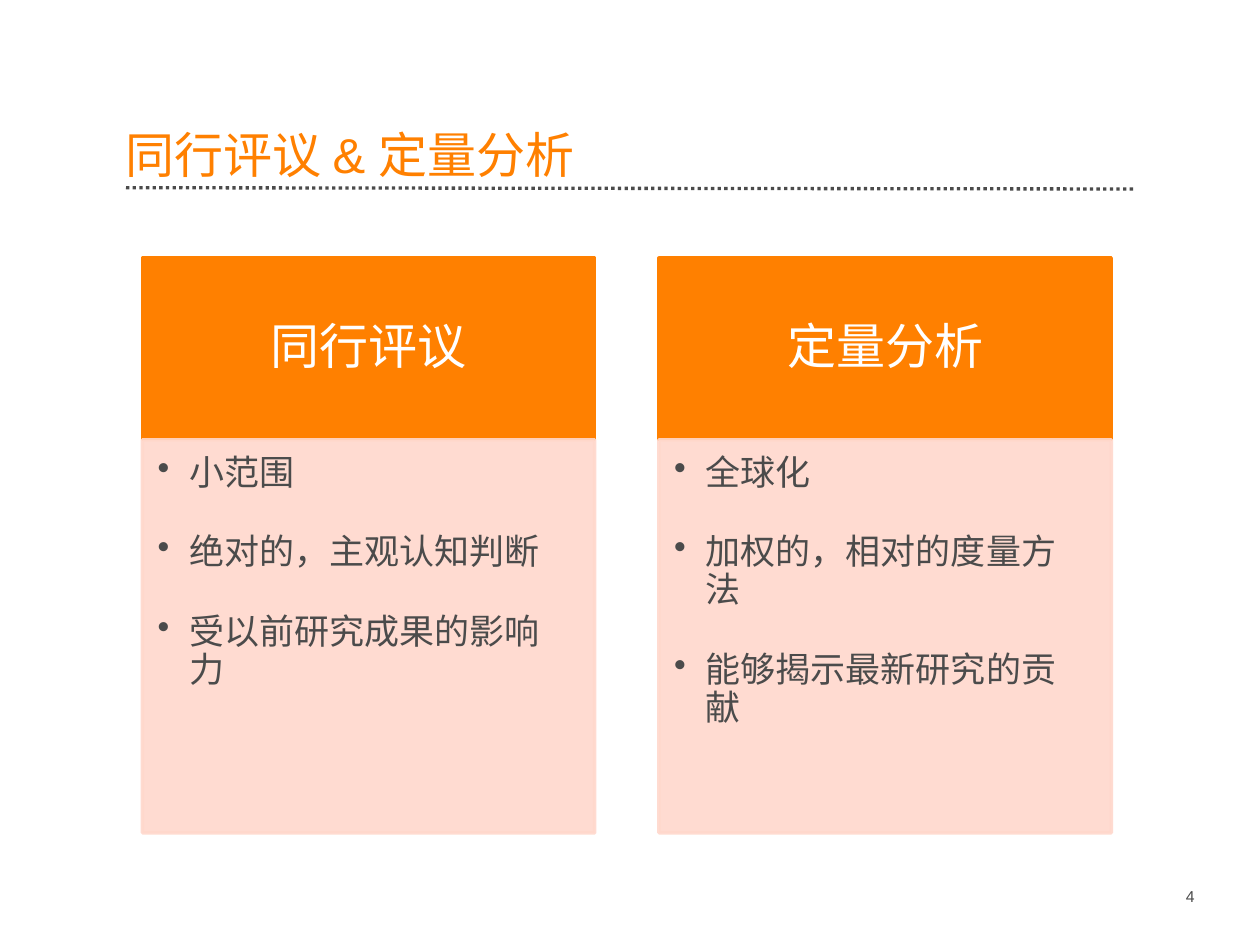
from dataclasses import dataclass

from lxml.etree import SubElement as Sub
from pptx import Presentation
from pptx.dml.color import RGBColor as RGB
from pptx.enum.dml import MSO_LINE_DASH_STYLE as Dash
from pptx.enum.shapes import MSO_CONNECTOR as Link, MSO_SHAPE as Shape
from pptx.enum.text import MSO_ANCHOR as Anchor, PP_ALIGN as Align
from pptx.oxml.ns import qn
from pptx.util import Inches, Pt


@dataclass(frozen=True)
class Theme:
    font: str = "Arial"
    orange: str = "FF8000"
    pink: str = "FFD8CC"
    grey: str = "4B4B4B"
    white: str = "FFFFFF"
    big: int = 28
    body: int = 20
    small: int = 9


T = Theme()

# Column grid, in inches
LEFT, TOP, STEP, WIDTH = 1.13, 2.05, 4.1, 3.59
HEAD, BODY = 1.44, 3.12

COLS = [
    ("同行评议", ["小范围", "绝对的，主观认知判断", "受以前研究成果的影响力"]),
    ("定量分析", ["全球化", "加权的，相对的度量方法", "能够揭示最新研究的贡献"]),
]


def write(shape, lines, size, color, align, pads, anchor=Anchor.TOP, gap=0.9):
    frame = shape.text_frame
    frame.word_wrap = True
    frame.vertical_anchor = anchor
    (frame.margin_left, frame.margin_top,
     frame.margin_right, frame.margin_bottom) = map(Inches, pads)
    frame.text = "\n".join(lines)
    for para in frame.paragraphs:
        para.alignment = align
        para.line_spacing = gap
        for run in para.runs:
            run.font.name = T.font
            run.font.size = Pt(size)
            run.font.color.rgb = RGB.from_string(color)
    return frame.paragraphs


def label(slide, box, text, size, color, align, pads, **style):
    shape = slide.shapes.add_textbox(*map(Inches, box))
    write(shape, [text], size, color, align, pads, **style)


def block(slide, box, color, alpha=None):
    shape = slide.shapes.add_shape(Shape.RECTANGLE, *map(Inches, box))
    shape.shadow.inherit = False
    shape.line.width = Pt(2)
    for fill in (shape.fill, shape.line.fill):
        fill.solid()
        fill.fore_color.rgb = RGB.from_string(color)
    if alpha:
        for tone in list(shape.element.spPr.iter(qn("a:srgbClr"))):
            Sub(tone, qn("a:alpha"), val=str(alpha * 1000))
    return shape


def bullet(para):
    para.level = 1
    para.space_after = Pt(24)
    props = para._p.get_or_add_pPr()
    props.set("marL", str(Inches(0.25)))
    props.set("indent", str(-Inches(0.25)))
    Sub(props, qn("a:buChar"), char="•")


def column(slide, left, head, items):
    top = block(slide, (left, TOP, WIDTH, HEAD), T.orange)
    write(top, [head], T.big, T.white, Align.CENTER,
          (0.22, 0.12, 0.22, 0.12), Anchor.MIDDLE)
    base = block(slide, (left, TOP + HEAD, WIDTH, BODY), T.pink, alpha=90)
    for para in write(base, items, T.body, T.grey, Align.LEFT,
                      (0.12, 0.12, 0.16, 0.17)):
        bullet(para)


def rule(slide, start, end):
    line = slide.shapes.add_connector(
        Link.STRAIGHT, *map(Inches, start + end))
    line.line.color.rgb = RGB.from_string(T.grey)
    line.line.width = Pt(1.9)
    line.line.dash_style = Dash.ROUND_DOT
    Sub(line.element.spPr, qn("a:effectLst"))


def main():
    deck = Presentation()
    deck.slide_width, deck.slide_height = Inches(10), Inches(7.5)
    slide = deck.slides.add_slide(deck.slide_layouts[6])

    # Title and dotted rule
    rule(slide, (1, 1.49), (9, 1.5))
    label(slide, (1, 0.55, 8, 0.91), "同行评议 & 定量分析", T.big, T.orange,
          Align.LEFT, (0, 0, 0, 0), anchor=Anchor.BOTTOM)

    # Two columns to compare
    for num, (head, items) in enumerate(COLS):
        column(slide, LEFT + num * STEP, head, items)

    # Slide number
    label(slide, (9.09, 6.99, 0.49, 0.25), "4", T.small, T.grey,
          Align.RIGHT, (0.1, 0.05, 0.1, 0.05), gap=1.0)

    deck.save("out.pptx")


if __name__ == "__main__":
    main()
